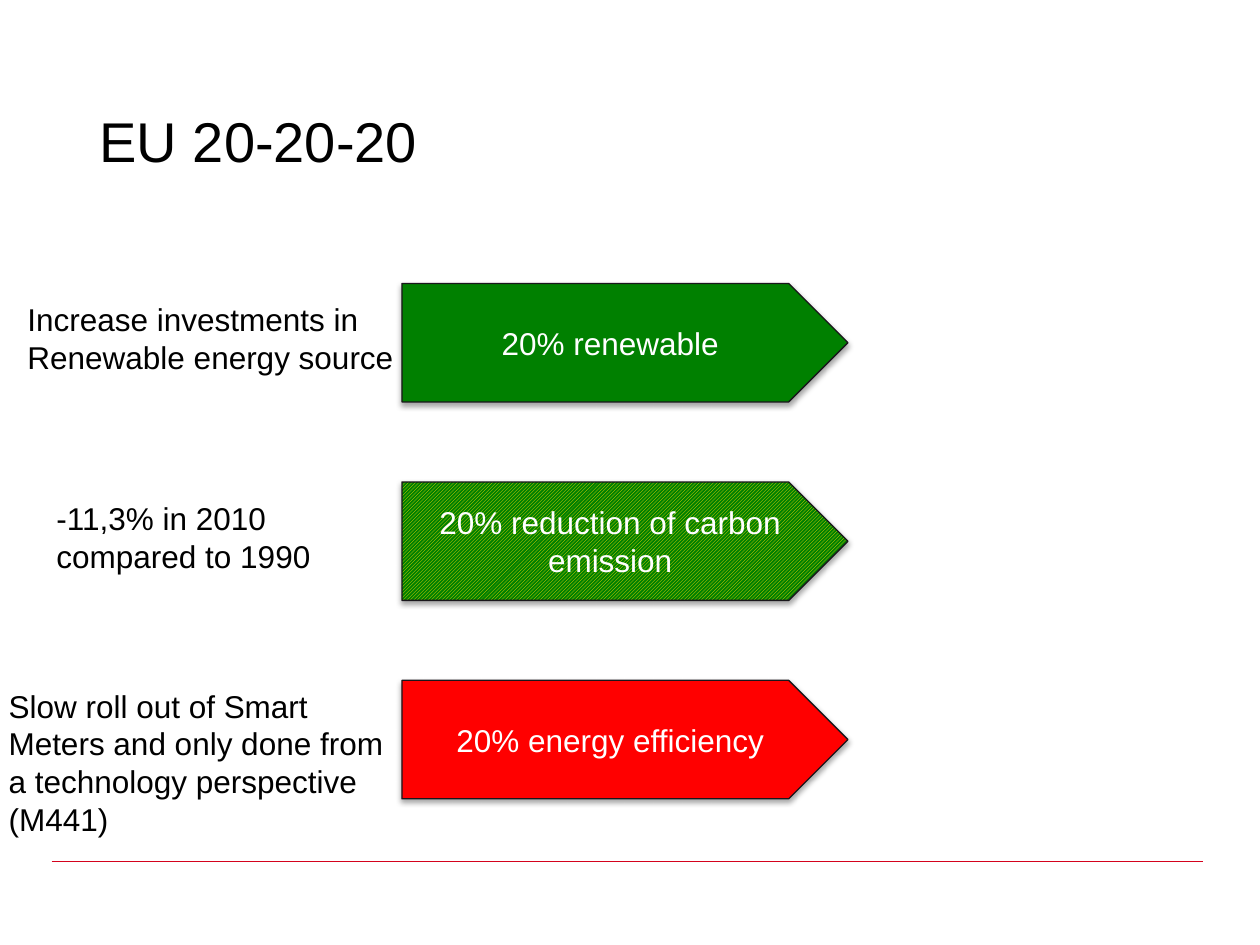
from lxml import etree
from pptx import Presentation
from pptx.dml.color import RGBColor
from pptx.enum.dml import MSO_PATTERN
from pptx.enum.shapes import MSO_CONNECTOR, MSO_SHAPE
from pptx.enum.text import MSO_ANCHOR, MSO_AUTO_SIZE, PP_ALIGN
from pptx.oxml import parse_xml
from pptx.oxml.ns import nsdecls, qn
from pptx.util import Inches, Pt

GREEN, YELLOW, RED = "008000", "FFDD00", "FF0000"
BLACK, WHITE, OUTLINE, RULE = "000000", "FFFFFF", "19161B", "D4021D"

# Arrow text, fill, pattern foreground, note lines, note box
TARGETS = [
    ("20% renewable", GREEN, None,
     ["Increase investments in", "Renewable energy source"],
     (0.12, 2.33, 3.13, 0.71)),
    ("20% reduction of carbon emission", GREEN, YELLOW,
     ["-11,3% in 2010", "compared to 1990"],
     (0.35, 3.91, 2.24, 0.71)),
    ("20% energy efficiency", RED, None,
     ["Slow roll out of Smart", "Meters and only done from",
      "a technology perspective", "(M441)"],
     (-0.03, 5.4, 3.2, 1.31)),
]
ARROW_TOP, ARROW_STEP = 2.25, 1.575


def rgb(value):
    return RGBColor.from_string(value)


def place(sp, box):
    sp.left, sp.top, sp.width, sp.height = (Inches(v) for v in box)


def style(tf, size, color, align=PP_ALIGN.LEFT):
    for p in tf.paragraphs:
        p.alignment = align
        for r in p.runs:
            r.font.name = "Arial"
            r.font.size = Pt(size)
            r.font.color.rgb = rgb(color)


def add_title(slide, text, box):
    sp = slide.shapes.title
    place(sp, box)
    tf = sp.text_frame
    tf.text = text
    tf.margin_left = 0
    tf.vertical_anchor = MSO_ANCHOR.MIDDLE
    tf.paragraphs[0].line_spacing = Pt(34)
    style(tf, 32, BLACK)


def add_rule(slide, left, right, y):
    line = slide.shapes.add_connector(
        MSO_CONNECTOR.STRAIGHT, Inches(left), Inches(y), Inches(right), Inches(y))
    line.line.color.rgb = rgb(RULE)
    line.line.width = Pt(0.5)
    etree.SubElement(line._element.spPr, qn("a:effectLst"))


def add_shadow(sp):
    sp.shadow.inherit = False
    effects = sp._element.spPr.find(qn("a:effectLst"))
    effects.append(parse_xml(
        f'<a:outerShdw {nsdecls("a")} blurRad="{Pt(3.1)}" dist="{Pt(1.8)}" '
        'dir="5400000" rotWithShape="0"><a:srgbClr val="000000">'
        '<a:alpha val="35000"/></a:srgbClr></a:outerShdw>'))


def add_arrow(slide, text, color, pattern_color, box):
    sp = slide.shapes.add_shape(MSO_SHAPE.PENTAGON, *(Inches(v) for v in box))
    if pattern_color:
        sp.fill.patterned()
        sp.fill.pattern = MSO_PATTERN.LIGHT_UPWARD_DIAGONAL
        sp.fill.fore_color.rgb = rgb(pattern_color)
        sp.fill.back_color.rgb = rgb(color)
    else:
        sp.fill.solid()
        sp.fill.fore_color.rgb = rgb(color)
    sp.line.color.rgb = rgb(OUTLINE)
    sp.line.width = Pt(0.75)
    add_shadow(sp)
    tf = sp.text_frame
    tf.text = text
    tf.vertical_anchor = MSO_ANCHOR.MIDDLE
    style(tf, 18, WHITE, PP_ALIGN.CENTER)


def add_note(slide, lines, box):
    sp = slide.shapes.add_textbox(*(Inches(v) for v in box))
    tf = sp.text_frame
    tf.word_wrap = False
    tf.auto_size = MSO_AUTO_SIZE.SHAPE_TO_FIT_TEXT
    tf.text = "\n".join(lines)
    style(tf, 18, BLACK)


def main():
    prs = Presentation()
    prs.slide_width, prs.slide_height = Inches(10), Inches(7.5)
    slide = prs.slides.add_slide(prs.slide_layouts[5])

    # Footer rule and title
    add_rule(slide, 0.41, 9.55, 6.84)
    add_title(slide, "EU 20-20-20", (0.79, 0.55, 8.62, 1.18))

    # One arrow and one note for each target
    for i, (text, color, pattern_color, lines, note_box) in enumerate(TARGETS):
        top = ARROW_TOP + i * ARROW_STEP
        add_arrow(slide, text, color, pattern_color, (3.19, top, 3.54, 0.94))
        add_note(slide, lines, note_box)

    prs.save("out.pptx")


if __name__ == "__main__":
    main()
